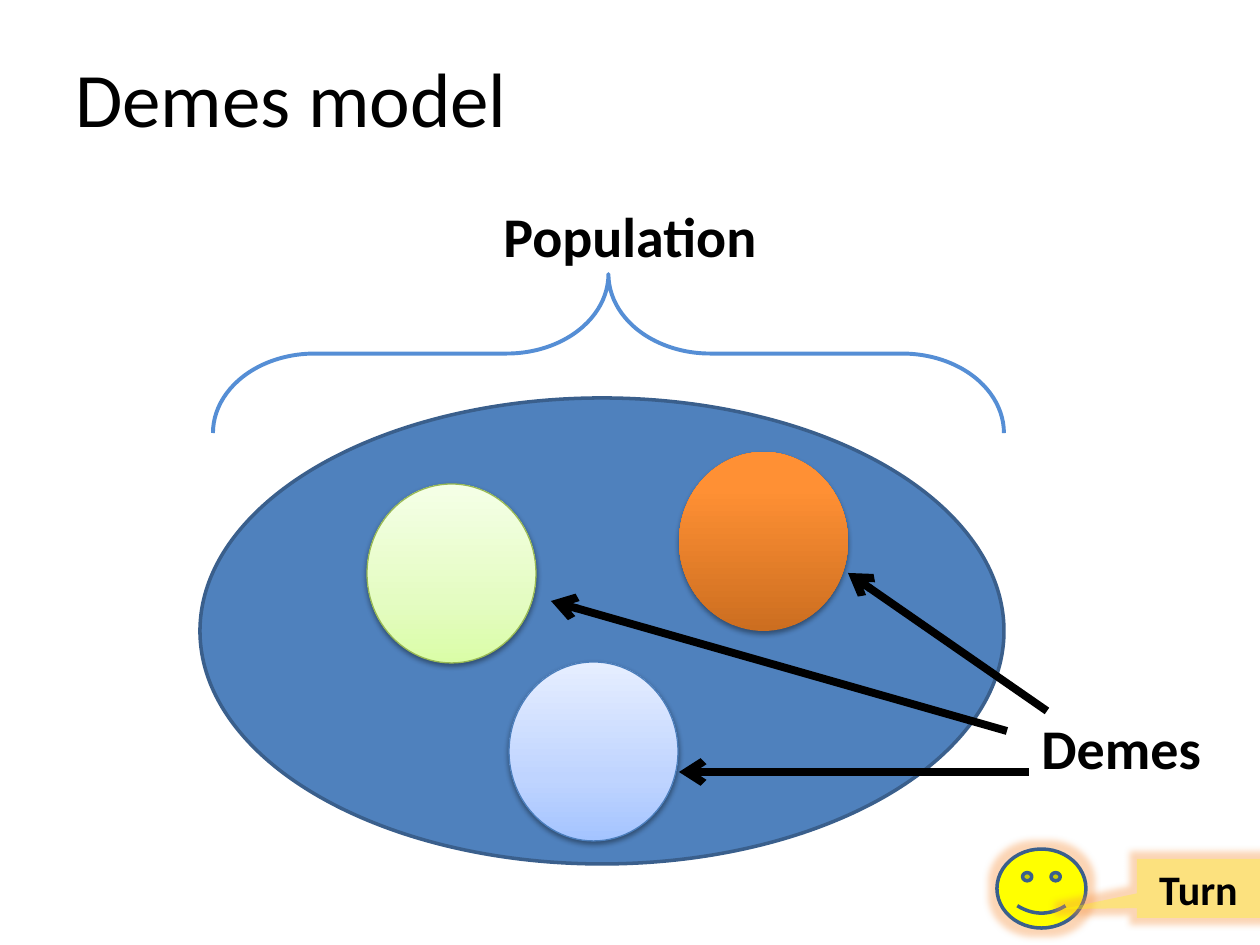
from lxml import etree
from pptx import Presentation
from pptx.dml.color import RGBColor
from pptx.enum.shapes import MSO_CONNECTOR, MSO_SHAPE
from pptx.enum.text import MSO_ANCHOR, PP_ALIGN
from pptx.oxml.ns import qn
from pptx.util import Emu, Pt

BLACK = RGBColor(0x00, 0x00, 0x00)
BLUE = RGBColor(0x4F, 0x81, 0xBD)
NAVY = RGBColor(0x3A, 0x5F, 0x8C)
SKY = RGBColor(0x55, 0x8E, 0xD5)
YELLOW = RGBColor(0xFF, 0xFF, 0x00)
GLOW = RGBColor(0xF7, 0x96, 0x46)
GREEN_EDGE = RGBColor(0x98, 0xB9, 0x55)
BLUE_EDGE = RGBColor(0x4B, 0x7E, 0xBC)
GREENS = [(0, RGBColor(0xDA, 0xFD, 0xA7)), (35, RGBColor(0xE4, 0xFC, 0xC2)),
          (100, RGBColor(0xF5, 0xFF, 0xE7))]
BLUES = [(0, RGBColor(0xA4, 0xC4, 0xFF)), (35, RGBColor(0xBF, 0xD4, 0xFF)),
         (100, RGBColor(0xE6, 0xEE, 0xFF))]
ORANGES = [(0, RGBColor(0xCC, 0x6E, 0x20)), (80, RGBColor(0xFF, 0x90, 0x34)),
           (100, RGBColor(0xFF, 0x91, 0x36))]


def px(n):
    """Turn pixels into EMU."""
    return Emu(round(n * 914400 / 126))


def add_node(parent, tag, **attrs):
    """Append a DrawingML element."""
    values = {k: str(v) for k, v in attrs.items()}
    return etree.SubElement(parent, qn(tag), values)


def add_color(parent, color, alpha=100):
    """Append a colour with its opacity in percent."""
    clr = add_node(parent, "a:srgbClr", val=color)
    if alpha < 100:
        add_node(clr, "a:alpha", val=alpha * 1000)


def write(sp, text, size, bold=True, align=PP_ALIGN.LEFT, anchor=MSO_ANCHOR.TOP):
    """Set and format the text of a shape."""
    tf = sp.text_frame
    tf.word_wrap = True
    tf.vertical_anchor = anchor
    p = tf.paragraphs[0]
    p.text = text
    p.alignment = align
    r = p.runs[0]
    r.font.name, r.font.size, r.font.bold = "Calibri", Pt(size), bold
    r.font.color.rgb = BLACK


def add_text(shapes, box, text, size, **style):
    """Add a text box."""
    write(shapes.add_textbox(*map(px, box)), text, size, **style)


def add_shape(shapes, kind, box, fill=None, line=None, width=2):
    """Add a preset shape without a shadow."""
    sp = shapes.add_shape(kind, *map(px, box))
    sp.shadow.inherit = False
    if fill is None:
        sp.fill.background()
    else:
        sp.fill.solid()
        sp.fill.fore_color.rgb = fill
    if line is None:
        sp.line.fill.background()
    else:
        sp.line.color.rgb = line
        sp.line.width = Pt(width)
    return sp


def add_deme(shapes, x, y, stops, line=None):
    """Add a shaded circle with a soft shadow."""
    sp = add_shape(shapes, MSO_SHAPE.OVAL, (x, y, 169, 179), None, line, 0.75)
    spPr = sp._element.spPr
    grad = etree.Element(qn("a:gradFill"), rotWithShape="1")
    gs_list = add_node(grad, "a:gsLst")
    for pos, color in stops:
        add_color(add_node(gs_list, "a:gs", pos=pos * 1000), color)
    add_node(grad, "a:lin", ang=270 * 60000, scaled=0)
    spPr.replace(spPr.find(qn("a:noFill")), grad)
    shadow = add_node(spPr.find(qn("a:effectLst")), "a:outerShdw", blurRad=Pt(3.1),
                      dist=Pt(1.6), dir=90 * 60000, rotWithShape=0)
    add_color(shadow, BLACK, 38)


def add_arrow(shapes, start, end):
    """Add a thick arrow."""
    c = shapes.add_connector(MSO_CONNECTOR.STRAIGHT, *map(px, start + end))
    c.line.color.rgb = BLACK
    c.line.width = Pt(4.5)
    add_node(c.line._get_or_add_ln(), "a:tailEnd", type="arrow")
    add_node(c._element.spPr, "a:effectLst")


def add_glow(sp):
    """Give a shape an orange glow."""
    effects = sp._element.spPr.find(qn("a:effectLst"))
    add_color(add_node(effects, "a:glow", rad=Pt(8)), GLOW, 40)


def add_turn_sign(shapes):
    """Add the smiley with its callout."""
    group = shapes.add_group_shape().shapes
    face = add_shape(group, MSO_SHAPE.SMILEY_FACE, (997, 849, 89, 79), YELLOW, NAVY)
    call = add_shape(group, MSO_SHAPE.RECTANGULAR_CALLOUT, (1137, 859, 123, 59), YELLOW)
    call.adjustments[0], call.adjustments[1] = -1.11, 0.35
    clr = call._element.spPr.find(qn("a:solidFill"))[0]
    add_node(clr, "a:alpha", val=30000)
    write(call, "Turn", 24, align=PP_ALIGN.CENTER, anchor=MSO_ANCHOR.MIDDLE)
    for sp in (face, call):
        add_glow(sp)


def main():
    """Build the slide."""
    prs = Presentation()
    prs.slide_width, prs.slide_height = px(1260), px(945)
    shapes = prs.slides.add_slide(prs.slide_layouts[6]).shapes
    add_text(shapes, (63, 38, 1134, 117), "Demes model", 44, bold=False,
             anchor=MSO_ANCHOR.MIDDLE)
    add_text(shapes, (63, 195, 1134, 649), "Population", 32, align=PP_ALIGN.CENTER)
    add_shape(shapes, MSO_SHAPE.OVAL, (200, 398, 804, 466), BLUE, NAVY)
    add_deme(shapes, 367, 484, GREENS, GREEN_EDGE)
    add_deme(shapes, 509, 662, BLUES, BLUE_EDGE)
    add_deme(shapes, 679, 452, ORANGES)
    add_text(shapes, (1029, 707, 221, 81), "Demes", 32)
    brace = add_shape(shapes, MSO_SHAPE.RIGHT_BRACE, (529, -42, 159, 791),
                      line=SKY, width=2.25)
    brace.rotation = 270
    brace.adjustments[0], brace.adjustments[1] = 0.64, 0.5
    for start, end in (((1007, 731), (551, 601)), ((1047, 711), (848, 573)),
                       ((1029, 772), (679, 772))):
        add_arrow(shapes, start, end)
    add_turn_sign(shapes)
    prs.save("out.pptx")


if __name__ == "__main__":
    main()
